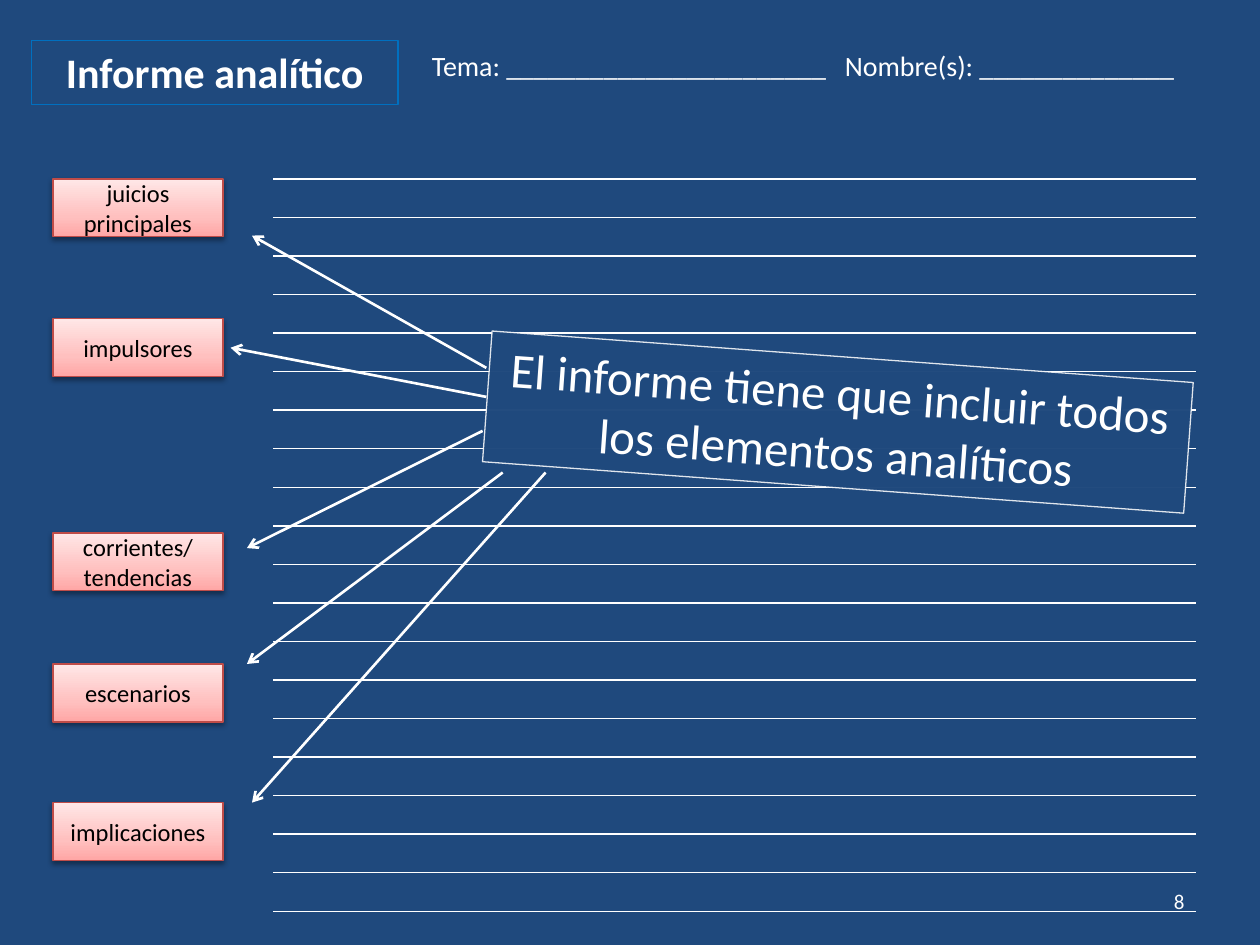
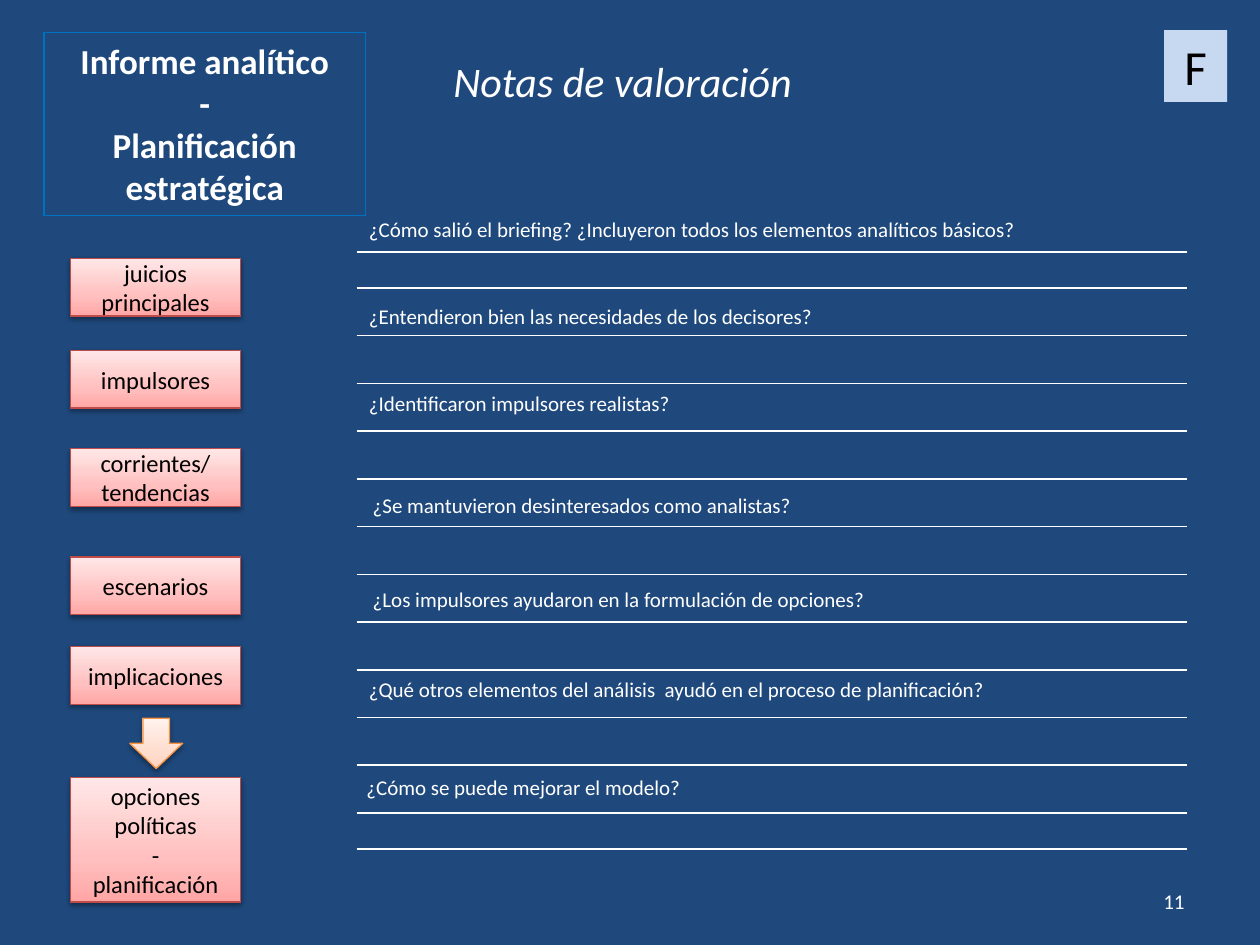
import pptx
import pptx.dml.color
import pptx.enum.shapes
import pptx.enum.text
import pptx.oxml.ns
import pptx.util
from dataclasses import dataclass
from lxml import etree

qn = pptx.oxml.ns.qn
ALIGN = pptx.enum.text.PP_ALIGN
ANCHOR = pptx.enum.text.MSO_ANCHOR
SHAPE = pptx.enum.shapes.MSO_SHAPE
COLUMNS, ROWS = 100, 75


@dataclass(frozen=True)
class Theme:
    font: str = "Calibri"
    background: str = "1F497D"
    ink: str = "FFFFFF"
    dark: str = "000000"
    frame: str = "0070C0"
    badge: str = "C6D9F1"
    red_line: str = "BF4C48"
    red_stops: tuple = ("FFA6A5", "FFC0BF", "FFE7E7")
    orange_line: str = "F69240"
    orange_stops: tuple = ("FFD2BD", "FFDED0", "FFF2ED")
    stop_shares: tuple = (0, 35, 100)
    note: int = 12
    label: int = 14
    field: int = 16
    long_title: int = 20
    title: int = 24
    banner: int = 28


def color(code):
    return pptx.dml.color.RGBColor.from_string(code)


def add_node(parent, tag, **attributes):
    values = {key: str(value) for key, value in attributes.items()}
    return etree.SubElement(parent, qn(tag), values)


class Sheet:
    """Hold the theme and the current slide, and draw elements on a 100 by 75 grid."""

    def __init__(self, deck, theme):
        self.deck, self.theme = deck, theme
        fill = deck.slide_master.background.fill
        fill.solid()
        fill.fore_color.rgb = color(theme.background)

    def start(self):
        self.slide = self.deck.slides.add_slide(self.deck.slide_layouts[5])

    def across(self, columns):
        return round(self.deck.slide_width * columns / COLUMNS)

    def down(self, rows):
        return round(self.deck.slide_height * rows / ROWS)

    def place(self, left, top, width, height):
        return self.across(left), self.down(top), self.across(width), self.down(height)

    def set_text(self, shape, text, size, ink=None, align=ALIGN.LEFT, anchor=ANCHOR.TOP,
                 bold=False, italic=False):
        frame = shape.text_frame
        frame.word_wrap = True
        frame.auto_size = pptx.enum.text.MSO_AUTO_SIZE.NONE
        frame.vertical_anchor = anchor
        frame.text = text
        for para in frame.paragraphs:
            para.alignment = align
            for span in para.runs:
                span.font.name = self.theme.font
                span.font.size = pptx.util.Pt(size)
                span.font.bold, span.font.italic = bold, italic
                span.font.color.rgb = color(ink or self.theme.ink)

    def outline(self, shape, code, width=0.75):
        shape.line.color.rgb = color(code)
        shape.line.width = pptx.util.Pt(width)

    def title(self, area, text, size):
        title = self.slide.shapes.title
        title.left, title.top, title.width, title.height = self.place(*area)
        self.outline(title, self.theme.frame)
        self.set_text(title, text, size, align=ALIGN.CENTER, bold=True)

    def text(self, area, text, size, **style):
        box = self.slide.shapes.add_textbox(*self.place(*area))
        self.set_text(box, text, size, **style)

    def page_number(self, number):
        self.text((71.7, 69.5, 23.3, 4), str(number), self.theme.note,
                  align=ALIGN.RIGHT, anchor=ANCHOR.MIDDLE)

    def solid(self, area, fill):
        box = self.slide.shapes.add_shape(SHAPE.RECTANGLE, *self.place(*area))
        box.shadow.inherit = False
        box.fill.solid()
        box.fill.fore_color.rgb = color(fill)
        box.line.fill.background()
        return box

    def badge(self, area, text):
        box = self.solid(area, self.theme.badge)
        self.set_text(box, text, self.theme.banner, self.theme.dark, ALIGN.CENTER)

    def banner(self, area, text, rotation):
        box = self.solid(area, self.theme.background)
        self.outline(box, self.theme.ink)
        tones = box._element.spPr.findall(".//" + qn("a:srgbClr"))
        for tone, opacity in zip(tones, (98, 85)):
            add_node(tone, "a:alpha", val=opacity * 1000)
        box.rotation = rotation
        self.set_text(box, text, self.theme.banner, align=ALIGN.CENTER)

    def glossy(self, kind, area, stops, line):
        shape = self.slide.shapes.add_shape(kind, *self.place(*area))
        shape.fill.gradient()
        shape.fill.gradient_angle = 90
        stop_list = shape._element.spPr.find(".//" + qn("a:gsLst"))
        for stop in list(stop_list):
            stop_list.remove(stop)
        for share, code in zip(self.theme.stop_shares, stops):
            add_node(add_node(stop_list, "a:gs", pos=share * 1000), "a:srgbClr", val=code)
        self.outline(shape, line)
        shape.shadow.inherit = False
        effects = shape._element.spPr.find(qn("a:effectLst"))
        shadow = add_node(effects, "a:outerShdw", blurRad=int(pptx.util.Pt(3.1)),
                          dist=int(pptx.util.Pt(1.6)), dir=5400000, rotWithShape=0)
        add_node(add_node(shadow, "a:srgbClr", val=self.theme.dark), "a:alpha", val=38000)
        return shape

    def label(self, left, top, text, height=4.6):
        box = self.glossy(SHAPE.RECTANGLE, (left, top, 13.5, height),
                          self.theme.red_stops, self.theme.red_line)
        self.set_text(box, text, self.theme.label, self.theme.dark, ALIGN.CENTER,
                      ANCHOR.MIDDLE)

    def down_arrow(self, area):
        self.glossy(SHAPE.DOWN_ARROW, area, self.theme.orange_stops, self.theme.orange_line)

    def arrow(self, start, end):
        line = self.slide.shapes.add_connector(
            pptx.enum.shapes.MSO_CONNECTOR.STRAIGHT, self.across(start[0]),
            self.down(start[1]), self.across(end[0]), self.down(end[1]))
        self.outline(line, self.theme.ink, 1.5)
        add_node(line._element.spPr.find(qn("a:ln")), "a:tailEnd", type="arrow")
        add_node(line._element.spPr, "a:effectLst")

    def ruled_lines(self, left, top, width, heights):
        area = self.place(left, top, width, sum(heights))
        table = self.slide.shapes.add_table(len(heights), 1, *area).table
        table.first_row = table.horz_banding = False
        style = table._tbl.tblPr.find(qn("a:tableStyleId"))
        style.text = "{2D5ABB26-0587-4C30-8999-92F81FD0307C}"
        for row, height in zip(table.rows, heights):
            row.height = self.down(height)
            cell = row.cells[0]
            cell.margin_top = cell.margin_bottom = 0
            para = cell.text_frame.paragraphs[0]
            add_node(para._p, "a:endParaRPr", sz=self.theme.note * 100)
            properties = cell._tc.get_or_add_tcPr()
            for side in ("a:lnT", "a:lnB"):
                border = add_node(properties, side, w=int(pptx.util.Pt(1)))
                add_node(add_node(border, "a:solidFill"), "a:srgbClr", val=self.theme.ink)
            cell.fill.background()


def draw_report(sheet):
    theme = sheet.theme
    sheet.start()
    sheet.ruled_lines(21.7, 14.2, 73.2, [3.06] * 19)
    sheet.title((2.5, 3.2, 29.1, 5.1), "Informe analítico", theme.title)
    sheet.text((33.3, 3.4, 62.3, 3.7),
               "Tema: _______________________   Nombre(s): ______________", theme.field)
    sheet.page_number(8)
    labels = (("juicios principales", 14.2), ("impulsores", 25.3),
              ("corrientes/ tendencias", 42.3), ("escenarios", 52.7), ("implicaciones", 63.7))
    for text, top in labels:
        sheet.label(4.2, top, text)
    sheet.banner((38.6, 28.3, 55.8, 10.4),
                 "El informe tiene que incluir todos los elementos analíticos", 4.2)
    arrows = (((38.6, 29.2), (20, 18.7)), ((38.6, 31.5), (18.3, 27.6)),
              ((38.3, 34.2), (19.6, 43.5)), ((39.9, 37.5), (19.6, 52.7)),
              ((43.3, 37.5), (20, 63.7)))
    for start, end in arrows:
        sheet.arrow(start, end)


def draw_assessment(sheet):
    theme = sheet.theme
    sheet.start()
    sheet.title((3.5, 2.6, 25.5, 14.5),
                "Informe analítico\v-\vPlanificación estratégica", theme.long_title)
    sheet.text((35, 3.9, 40, 7.4), "Notas de valoración", theme.title, italic=True)
    sheet.ruled_lines(28.3, 20, 65.9, [2.86] + [3.79] * 11 + [2.86])
    sheet.page_number(11)
    labels = (("juicios principales", 20.5), ("impulsores", 27.8),
              ("corrientes/ tendencias", 35.6), ("escenarios", 44.2), ("implicaciones", 51.3))
    for text, top in labels:
        sheet.label(5.6, top, text)
    sheet.down_arrow((10.3, 57, 4.2, 4))
    sheet.label(5.6, 61.7, "opciones políticas\v-\vplanificación", 9.9)
    questions = (
        (28.3, 16.7, "¿Cómo salió el briefing? ¿Incluyeron todos los elementos analíticos básicos?"),
        (28.3, 23.6, "¿Entendieron bien las necesidades de los decisores?"),
        (28.3, 30.5, "¿Identificaron impulsores realistas?"),
        (28.6, 38.6, "¿Se mantuvieron desinteresados como analistas?"),
        (28.6, 46.1, "¿Los impulsores ayudaron en la formulación de opciones?"),
        (28.3, 53.2, "¿Qué otros elementos del análisis  ayudó en el proceso de planificación?"),
        (28.1, 61, "¿Cómo se puede mejorar el modelo?"))
    for left, top, text in questions:
        sheet.text((left, top, 59, 3), text, theme.note)
    sheet.badge((92.4, 2.4, 5, 5.7), "F")


def main():
    deck = pptx.Presentation()
    deck.slide_width, deck.slide_height = pptx.util.Inches(10), pptx.util.Inches(7.5)
    sheet = Sheet(deck, Theme())
    draw_report(sheet)
    draw_assessment(sheet)
    deck.save("out.pptx")


if __name__ == "__main__":
    main()
